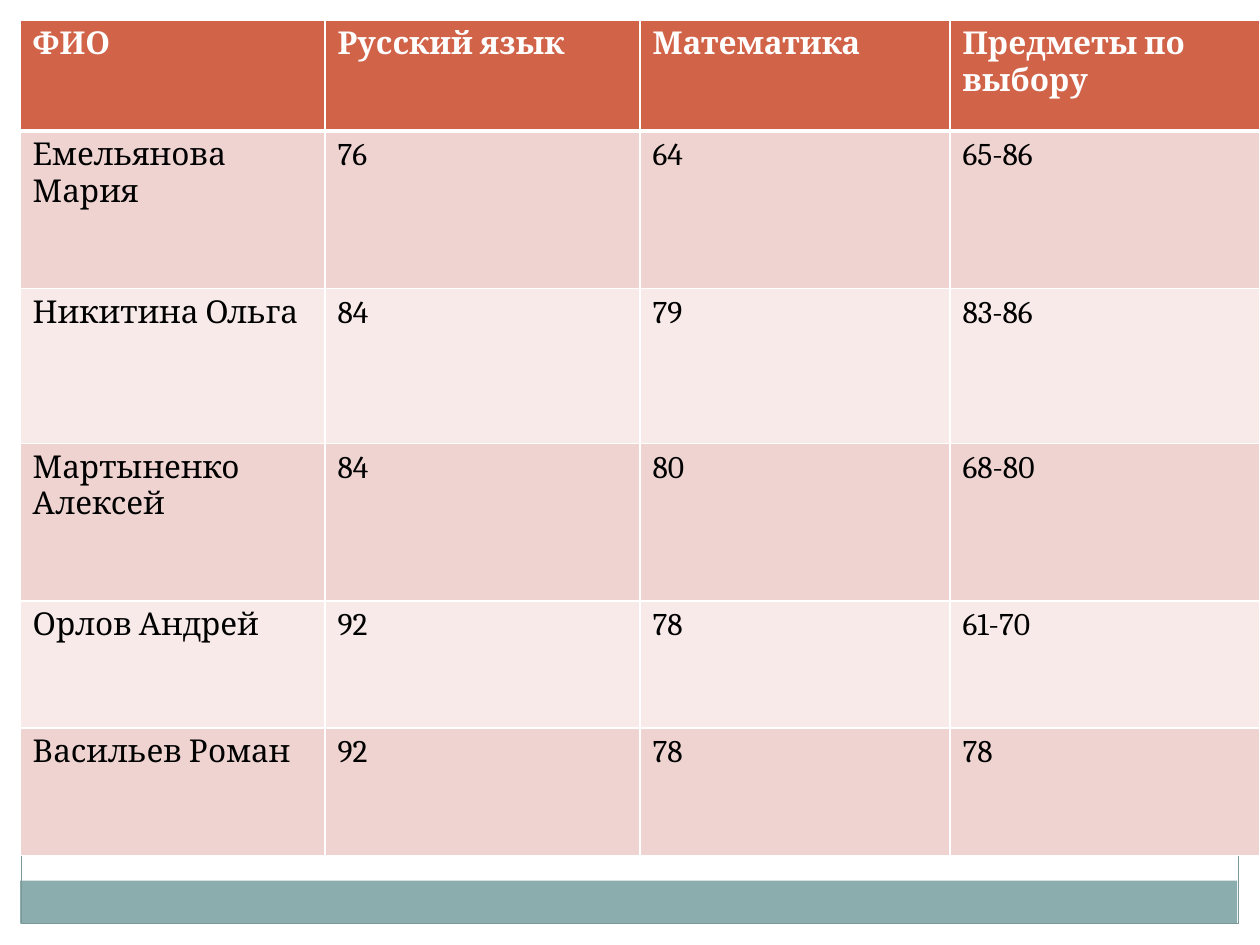
from lxml import etree
from pptx import Presentation
from pptx import util as u
from pptx.dml.color import RGBColor
from pptx.enum import shapes
from pptx.oxml import ns

COLORS = {
    "white": "FFFFFF",
    "black": "000000",
    "teal": "8CADAE",
    "frame": "7C999A",
    "header": "D16349",
    "band_dark": "EED3D0",
    "band_light": "F7EAE9",
}
FONT = "Cambria"
WIDTH, HEIGHT, MARGIN = 10, 7.5, 0.17

COLUMN_WIDTHS = [2.42, 2.5, 2.46, 2.46]
ROW_HEIGHTS = [0.88, 1.25, 1.23, 1.25, 1.01, 1.01]
SCORES = [
    ["ФИО", "Русский язык", "Математика", "Предметы по выбору"],
    ["Емельянова Мария", "76", "64", "65-86"],
    ["Никитина Ольга", "84", "79", "83-86"],
    ["Мартыненко Алексей", "84", "80", "68-80"],
    ["Орлов Андрей", "92", "78", "61-70"],
    ["Васильев Роман", "92", "78", "78"],
]


def color(name):
    return RGBColor.from_string(COLORS[name])


def add_box(page, left, top, width, height, fill=None, line=None):
    box = page.shapes.add_shape(
        shapes.MSO_SHAPE.RECTANGLE,
        *(u.Inches(length) for length in (left, top, width, height)))
    box.shadow.inherit = False
    if fill:
        box.fill.solid()
        box.fill.fore_color.rgb = color(fill)
    else:
        box.fill.background()
    if line:
        box.line.color.rgb = color(line)
        box.line.width = u.Pt(0.75)
    else:
        box.line.fill.background()


def add_border(cell, side, points):
    properties = cell._tc.get_or_add_tcPr()
    line = etree.SubElement(properties, ns.qn(f"a:ln{side}"), w=str(u.Pt(points)))
    fill = etree.SubElement(line, ns.qn("a:solidFill"))
    etree.SubElement(fill, ns.qn("a:srgbClr"), val=COLORS["white"])


def fill_cell(cell, content, row):
    is_header = row == 0
    # Borders come before the fill in the cell properties
    widths = {"L": 1, "R": 1, "T": 3 if row == 1 else 1, "B": 3 if is_header else 1}
    for side, points in widths.items():
        add_border(cell, side, points)
    band = "band_dark" if row % 2 else "band_light"
    cell.fill.solid()
    cell.fill.fore_color.rgb = color("header" if is_header else band)

    span = cell.text_frame.paragraphs[0].add_run()
    span.text = content
    span.font.name = FONT
    span.font.size = u.Pt(18)
    span.font.bold = is_header
    span.font.color.rgb = color("white" if is_header else "black")


def add_scores(page, left, top):
    frame = page.shapes.add_table(
        len(ROW_HEIGHTS), len(COLUMN_WIDTHS), u.Inches(left), u.Inches(top),
        u.Inches(sum(COLUMN_WIDTHS)), u.Inches(sum(ROW_HEIGHTS)))
    table = frame.table
    for column, width in zip(table.columns, COLUMN_WIDTHS):
        column.width = u.Inches(width)
    for index, height in enumerate(ROW_HEIGHTS):
        table.rows[index].height = u.Inches(height)
        for cell, content in zip(table.rows[index].cells, SCORES[index]):
            fill_cell(cell, content, index)


def main():
    deck = Presentation()
    deck.slide_width, deck.slide_height = u.Inches(WIDTH), u.Inches(HEIGHT)
    page = deck.slides.add_slide(deck.slide_layouts[6])

    # White margins
    add_box(page, 0, 0, WIDTH, MARGIN, fill="white")
    for left in (WIDTH - MARGIN, 0):
        add_box(page, left, 0, MARGIN, HEIGHT, fill="white")

    # Footer band and page frame
    add_box(page, 0.16, 6.99, 9.66, 0.34, fill="teal")
    add_box(page, MARGIN, MARGIN, WIDTH - 2 * MARGIN, HEIGHT - 2 * MARGIN, line="frame")

    # Exam scores
    add_scores(page, 0.16, 0.16)

    deck.save("out.pptx")


if __name__ == "__main__":
    main()
